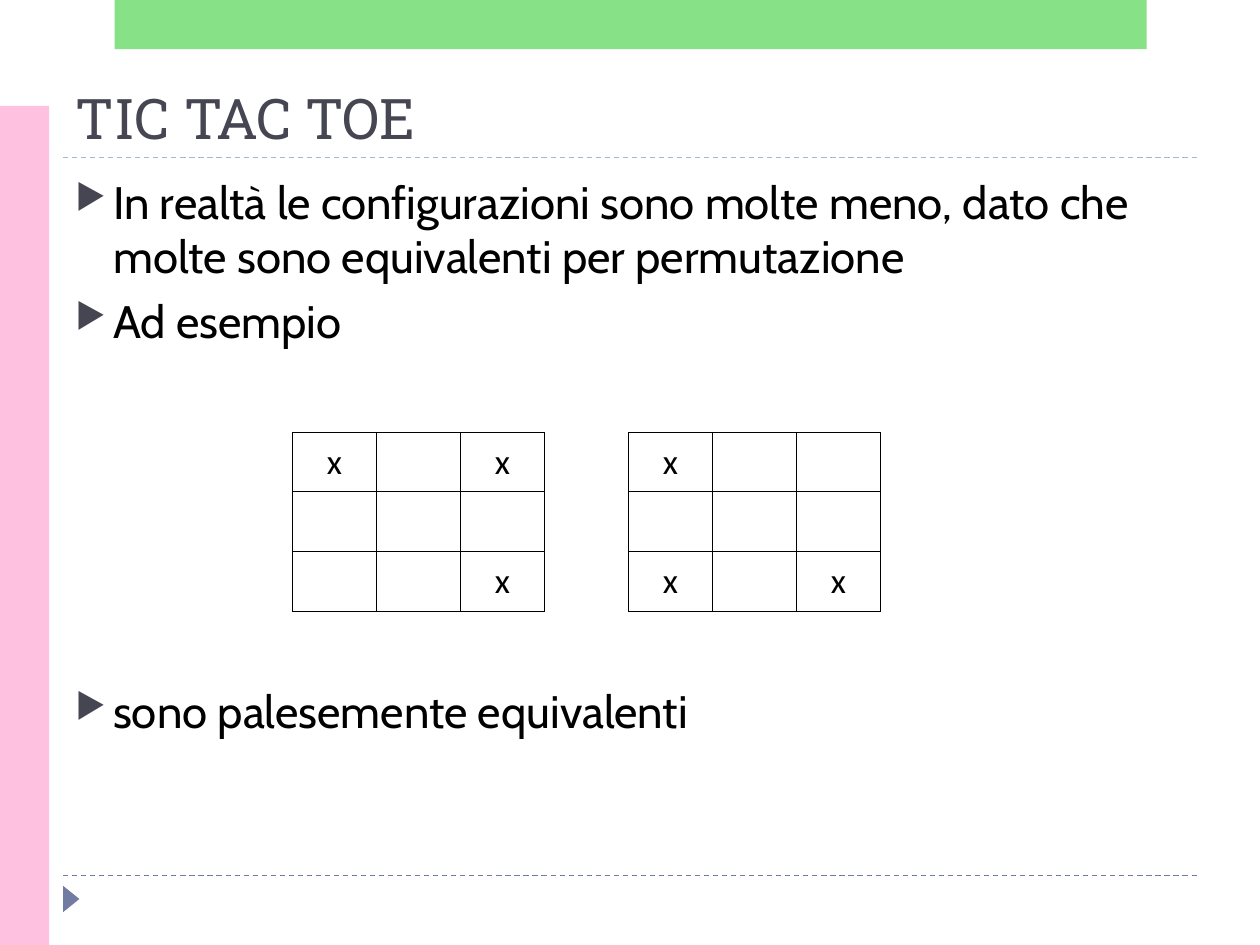
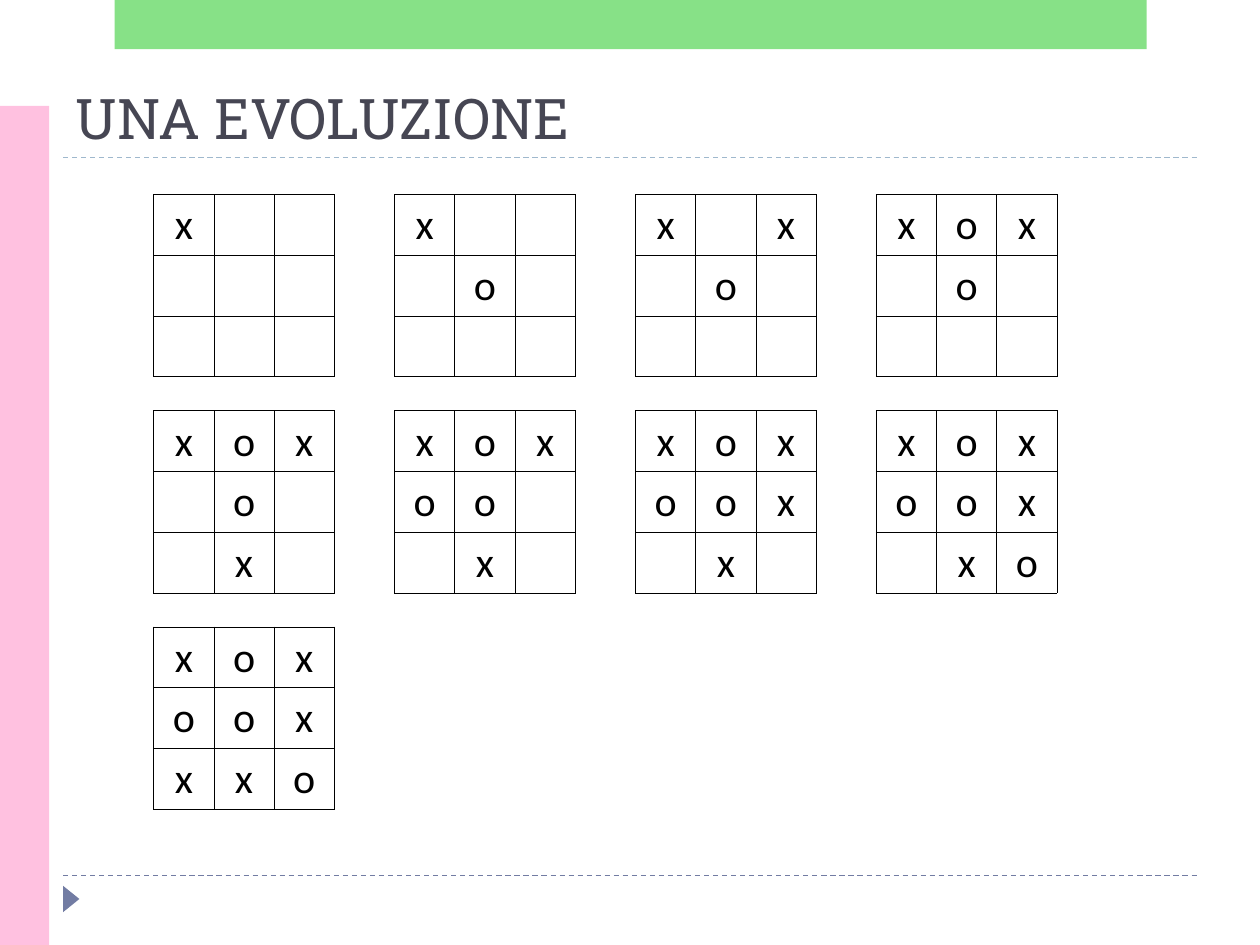
from lxml import etree
from pptx import Presentation
from pptx.dml.color import RGBColor
from pptx.enum.dml import MSO_LINE
from pptx.enum.shapes import MSO_CONNECTOR, MSO_SHAPE
from pptx.enum.text import MSO_ANCHOR, MSO_AUTO_SIZE, PP_ALIGN
from pptx.oxml.ns import qn
from pptx.util import Inches, Pt

DASH = MSO_LINE.DASH
LINE = MSO_CONNECTOR.STRAIGHT
RECT, WEDGE = MSO_SHAPE.RECTANGLE, MSO_SHAPE.ISOSCELES_TRIANGLE
BASE, MIDDLE, TOP = MSO_ANCHOR.BOTTOM, MSO_ANCHOR.MIDDLE, MSO_ANCHOR.TOP
FIXED = MSO_AUTO_SIZE.NONE
LEFT, CENTER = PP_ALIGN.LEFT, PP_ALIGN.CENTER

WIDTH, HEIGHT = Inches(10), Inches(7.5)
COL, ROW = WIDTH / 100, HEIGHT / 75

INK, SLATE, BLUE, PALE = "000000", "464653", "727CA3", "9FB8CD"
PINK, GREEN = "FFC1E0", "62D862"
PLAIN = "{2D5ABB26-0587-4C30-8999-92F81FD0307C}"

HEAD = {"name": "Roboto Slab", "size": Pt(32), "bold": False}
BODY = {"name": "Cabin", "size": Pt(26)}
MARK = {"name": "Calibri"}
CELL = {"margin_left": Inches(0.01), "margin_right": Inches(0.01),
        "margin_top": Inches(0.01), "margin_bottom": 0,
        "vertical_anchor": MIDDLE}
SIDES = {"a:lnL": (0, -1), "a:lnR": (0, 1), "a:lnT": (-1, 0), "a:lnB": (1, 0)}

RULES = [(12.5, PALE), (69.5, BLUE)]
BANDS = [(RECT, (0, 8.4, 3.9, 66.6), PINK, 0, 100),
         (RECT, (9.1, 0, 81.9, 3.9), GREEN, 0, 76),
         (WEDGE, (4.6, 70.7, 2.1, 1.3), BLUE, 90, 100)]
POINTS = [("In realtà le configurazioni sono molte meno, dato che "
           "molte sono equivalenti per permutazione", 0),
          ("Ad esempio", 6),
          ("sono palesemente equivalenti", 191.5)]
TWINS = ["x.x.....x", "x.....x.x"]
MOVES = [0, 4, 2, 1, 7, 3, 5, 8, 6]


def paint(code):
    """Turn a hex string into a colour."""
    return RGBColor.from_string(code)


def place(box):
    """Turn grid columns and rows into slide lengths."""
    x, y, w, h = box
    return [round(n) for n in (x * COL, y * ROW, w * COL, h * ROW)]


def apply(item, values):
    """Set each named value on an item."""
    for name, value in values.items():
        setattr(item, name, value)


def write(para, text, font, code):
    """Add a formatted run to a paragraph."""
    run = para.add_run()
    run.text = text
    apply(run.font, font)
    run.font.color.rgb = paint(code)


def add(parent, tag, **values):
    """Append an XML element."""
    return etree.SubElement(parent, qn(tag), **values)


def draw_rule(slide, row, code):
    """Draw a dashed line across the slide."""
    x, y, w, _ = place((5, row, 90, 0))
    rule = slide.shapes.add_connector(LINE, x, y, x + w, y)
    apply(rule.line, {"width": Pt(0.75), "dash_style": DASH})
    rule.line.color.rgb = paint(code)
    add(rule._element.spPr, "a:effectLst")


def draw_band(slide, kind, box, code, turn, alpha):
    """Draw a filled shape without an outline."""
    band = slide.shapes.add_shape(kind, *place(box))
    band.rotation = turn
    band.shadow.inherit = False
    band.fill.solid()
    band.fill.fore_color.rgb = paint(code)
    band.line.fill.background()
    if alpha < 100:
        tint = next(band._element.spPr.iter(qn("a:srgbClr")))
        add(tint, "a:alpha", val=str(alpha * 1000))


def start(deck, title):
    """Add a slide with the shared frame and a title."""
    slide = deck.slides.add_slide(deck.slide_layouts[5])
    for rule in RULES:
        draw_rule(slide, *rule)
    for band in BANDS:
        draw_band(slide, *band)
    head = slide.shapes.title
    names = ("left", "top", "width", "height")
    apply(head, dict(zip(names, place((5, 5.5, 90, 7)))))
    frame = head.text_frame
    apply(frame, {"vertical_anchor": BASE, "auto_size": FIXED, "word_wrap": True})
    frame.paragraphs[0].alignment = LEFT
    write(frame.paragraphs[0], title, HEAD, SLATE)
    return slide


def draw_points(slide, box, points):
    """Write bulleted paragraphs in a box."""
    frame = slide.shapes.add_textbox(*place(box)).text_frame
    apply(frame, {"word_wrap": True, "auto_size": FIXED, "vertical_anchor": TOP})
    for n, (text, gap) in enumerate(points):
        para = frame.add_paragraph() if n else frame.paragraphs[0]
        para.space_before = Pt(gap)
        props = para._p.get_or_add_pPr()
        props.set("marL", str(Inches(0.3)))
        props.set("indent", str(-Inches(0.3)))
        add(add(props, "a:buClr"), "a:srgbClr", val=SLATE)
        add(props, "a:buSzPct", val="76000")
        add(props, "a:buChar", char="▶")
        write(para, text, BODY, INK)


def draw_edge(cell, tag, shown):
    """Set one border of a cell."""
    edge = add(cell._tc.get_or_add_tcPr(), tag, w=str(Pt(0.5)))
    if shown:
        add(add(edge, "a:solidFill"), "a:srgbClr", val=INK)
    else:
        add(edge, "a:noFill")


def draw_boards(slide, box, boards, across, size, gap=0):
    """Lay out three by three boards in one table, a blank cell apart."""
    down = -(-len(boards) // across)
    rows, cols = 4 * down - 1, 4 * across - 1
    table = slide.shapes.add_table(rows, cols, *place(box)).table
    apply(table, {"first_row": False, "horz_banding": False})
    next(table._tbl.iter(qn("a:tableStyleId"))).text = PLAIN
    _, _, wide, high = place(box)
    space = round(gap * ROW)
    side = (high - space * (down - 1)) / (3 * down)
    for col in table.columns:
        col.width = round(wide / cols)
    for n, row in enumerate(table.rows):
        row.height = space if n % 4 == 3 else round(side)

    def look(r, c):
        """Give the mark at a cell, or nothing outside the boards."""
        n = r // 4 * across + c // 4
        inside = 0 <= r < rows and 0 <= c < cols and 3 not in (r % 4, c % 4)
        return boards[n][r % 4 * 3 + c % 4] if inside and n < len(boards) else ""

    for r in range(rows):
        for c in range(cols):
            cell, mark = table.cell(r, c), look(r, c)
            apply(cell, CELL)
            for tag, (dr, dc) in SIDES.items():
                draw_edge(cell, tag, mark or look(r + dr, c + dc))
            cell.fill.background()
            para = cell.text_frame.paragraphs[0]
            para.alignment = CENTER
            if mark in ("x", "o"):
                write(para, mark, MARK | {"size": Pt(size)}, INK)
            else:
                add(para._p, "a:endParaRPr", sz="800")


def play(moves):
    """List the board after each move, x first."""
    board, states = ["."] * 9, []
    for n, spot in enumerate(moves):
        board[spot] = "xo"[n % 2]
        states.append("".join(board))
    return states


def main():
    """Build and save both slides."""
    deck = Presentation()
    apply(deck, {"slide_width": WIDTH, "slide_height": HEIGHT})
    slide = start(deck, "TIC TAC TOE")
    draw_points(slide, (5, 13.3, 90, 54), POINTS)
    draw_boards(slide, (23.2, 34.3, 46.7, 14.2), TWINS, 2, 20)
    slide = start(deck, "UNA EVOLUZIONE")
    draw_boards(slide, (12.2, 15.45, 71.7, 48.8), play(MOVES), 4, 24, 2.7)
    deck.save("out.pptx")


if __name__ == "__main__":
    main()
